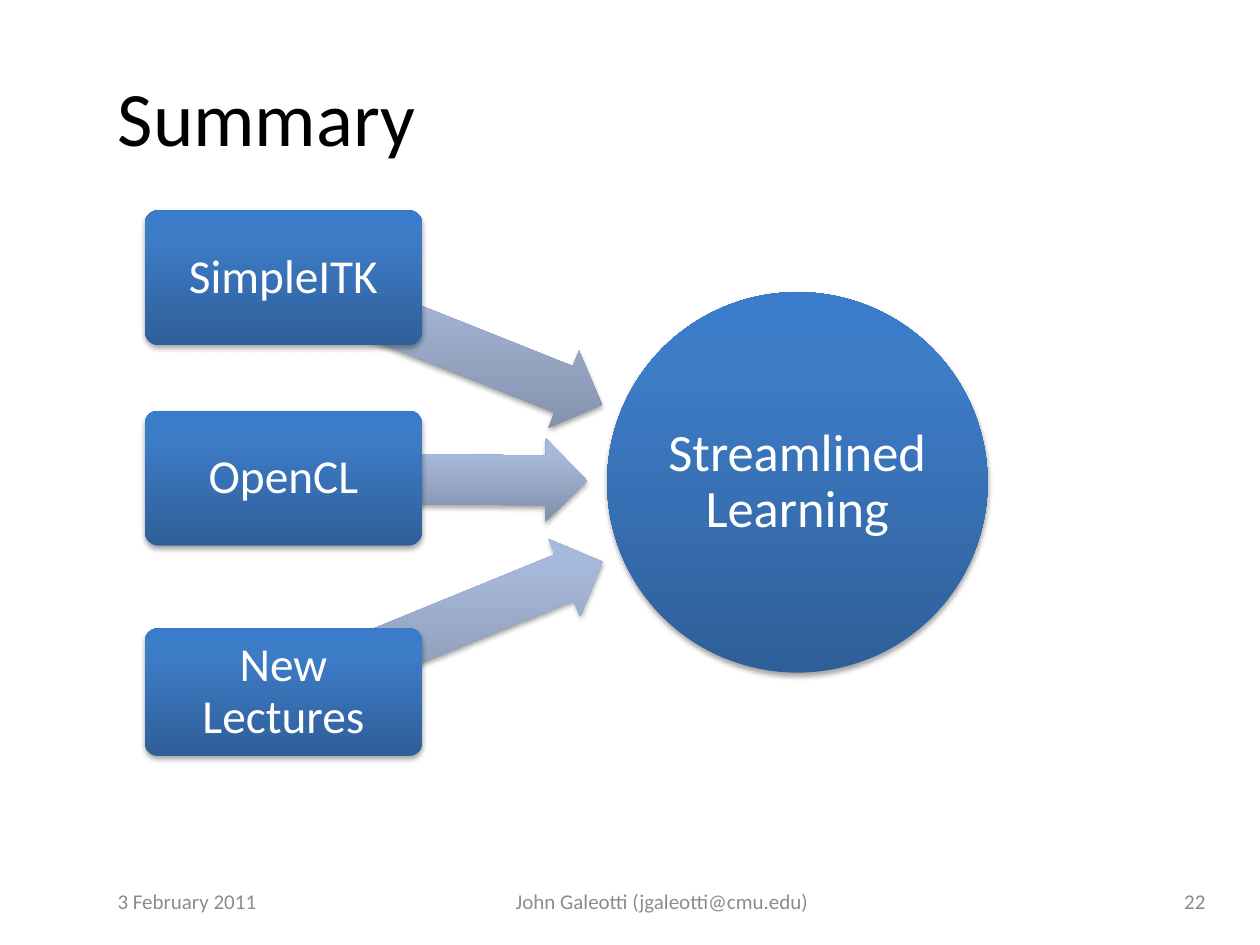
import math

from pptx import Presentation
from pptx.dml.color import RGBColor
from pptx.enum.shapes import MSO_SHAPE
from pptx.enum.text import MSO_ANCHOR, PP_ALIGN
from pptx.oxml import parse_xml
from pptx.oxml.ns import nsdecls
from pptx.util import Cm, Pt

ELLIPSE, ROUNDED, ARROW = MSO_SHAPE.OVAL, MSO_SHAPE.ROUNDED_RECTANGLE, MSO_SHAPE.LEFT_ARROW
LEFT, CENTER, RIGHT = PP_ALIGN.LEFT, PP_ALIGN.CENTER, PP_ALIGN.RIGHT
MIDDLE = MSO_ANCHOR.MIDDLE
TITLE_ONLY = 5
FONT = "Calibri"
COLORS = {"title": "000000", "node": "FFFFFF", "footer": "8C8C8C", "shadow": "000000"}
# Gradient stops from bottom to top: position in percent, colour
GRADIENTS = {
    "node": [(0, "2F5F99"), (80, "3D7CC7"), (100, "3A7CCB")],
    "arrow": [(0, "818FA8"), (80, "A7B9DA"), (100, "A7BADC")],
}


def write_text(shape, text, size, color, alignment):
    text_frame = shape.text_frame
    text_frame.text = text
    text_frame.word_wrap = True
    text_frame.vertical_anchor = MIDDLE
    paragraph = text_frame.paragraphs[0]
    paragraph.alignment = alignment
    font = paragraph.runs[0].font
    font.name = FONT
    font.size = Pt(size)
    font.color.rgb = RGBColor.from_string(COLORS[color])
    return paragraph


def add_glossy_shape(slide, kind, box, gradient):
    """Add a borderless shape with an upright gradient and a soft shadow below."""
    shape = slide.shapes.add_shape(kind, *(Cm(length) for length in box))
    stops = "".join(
        f'<a:gs pos="{position * 1000}"><a:srgbClr val="{color}"/></a:gs>'
        for position, color in GRADIENTS[gradient]
    )
    properties = shape._element.spPr
    properties.append(parse_xml(
        f'<a:gradFill {nsdecls("a")} rotWithShape="0"><a:gsLst>{stops}</a:gsLst>'
        '<a:lin ang="16200000" scaled="0"/></a:gradFill>'
    ))
    shape.line.fill.background()
    properties.append(parse_xml(
        f'<a:effectLst {nsdecls("a")}><a:outerShdw blurRad="{Pt(3.1)}" dist="{Pt(1.8)}" '
        f'dir="5400000" rotWithShape="0"><a:srgbClr val="{COLORS["shadow"]}">'
        '<a:alpha val="35000"/></a:srgbClr></a:outerShdw></a:effectLst>'
    ))
    return shape


def add_node(slide, kind, box, text, size, inset):
    node = add_glossy_shape(slide, kind, box, "node")
    paragraph = write_text(node, text, size, "node", CENTER)
    paragraph.line_spacing = 0.9
    text_frame = node.text_frame
    text_frame.margin_left = text_frame.margin_right = Cm(inset)
    text_frame.margin_top = text_frame.margin_bottom = Cm(inset)
    return node


def add_arrow(slide, start, target, clearance):
    """Point an arrow from start towards target, stopping at the clearance."""
    thickness = 1.68
    across, down = target[0] - start[0], target[1] - start[1]
    angle = math.atan2(down, across)
    length = math.hypot(across, down) - clearance
    center_x = start[0] + length / 2 * math.cos(angle)
    center_y = start[1] + length / 2 * math.sin(angle)
    box = (center_x - length / 2, center_y - thickness / 2, length, thickness)
    arrow = add_glossy_shape(slide, ARROW, box, "arrow")
    arrow.adjustments[0] = 0.6
    arrow.adjustments[1] = 0.5
    arrow.rotation = math.degrees(angle) + 180


def add_converging_diagram(slide, left, top):
    diameter, gap = 7.67, 0.4
    circle_left, circle_top = left + 9.32, top + 1.65
    radius = diameter / 2
    target = (circle_left + radius, circle_top + radius)
    add_node(slide, ELLIPSE, (circle_left, circle_top, diameter, diameter),
             "Streamlined Learning", 30, 0.05)

    width = 5.59
    sources = [("SimpleITK", 0, 2.72), ("OpenCL", 4.04, 2.72), ("New Lectures", 8.43, 2.57)]
    for text, offset, height in sources:
        source_top = top + offset
        start = (left + width / 2, source_top + height / 2)
        add_arrow(slide, start, target, radius + gap)
        node = add_node(slide, ROUNDED, (left, source_top, width, height), text, 27, 0.15)
        node.adjustments[0] = 0.1


def add_title(slide, left, top, width, height):
    title = slide.shapes.title
    title.left, title.top, title.width, title.height = Cm(left), Cm(top), Cm(width), Cm(height)
    write_text(title, "Summary", 44, "title", LEFT)


def add_footer(slide, left, top, width, height):
    side, middle = 5.93, 8.05
    items = [
        ("3 February 2011", left, side, LEFT),
        ("John Galeotti (jgaleotti@cmu.edu)", left + 7.2, middle, CENTER),
        ("22", left + width - side, side, RIGHT),
    ]
    for text, item_left, item_width, alignment in items:
        box = slide.shapes.add_textbox(Cm(item_left), Cm(top), Cm(item_width), Cm(height))
        write_text(box, text, 12, "footer", alignment)


def main():
    presentation = Presentation()
    presentation.slide_width, presentation.slide_height = Cm(25.4), Cm(19.05)
    slide = presentation.slides.add_slide(presentation.slide_layouts[TITLE_ONLY])
    add_title(slide, 2.12, 0.74, 22.43, 3.18)
    add_converging_diagram(slide, 2.92, 4.24)
    add_footer(slide, 2.12, 17.65, 22.43, 1.02)
    presentation.save("out.pptx")


if __name__ == "__main__":
    main()
